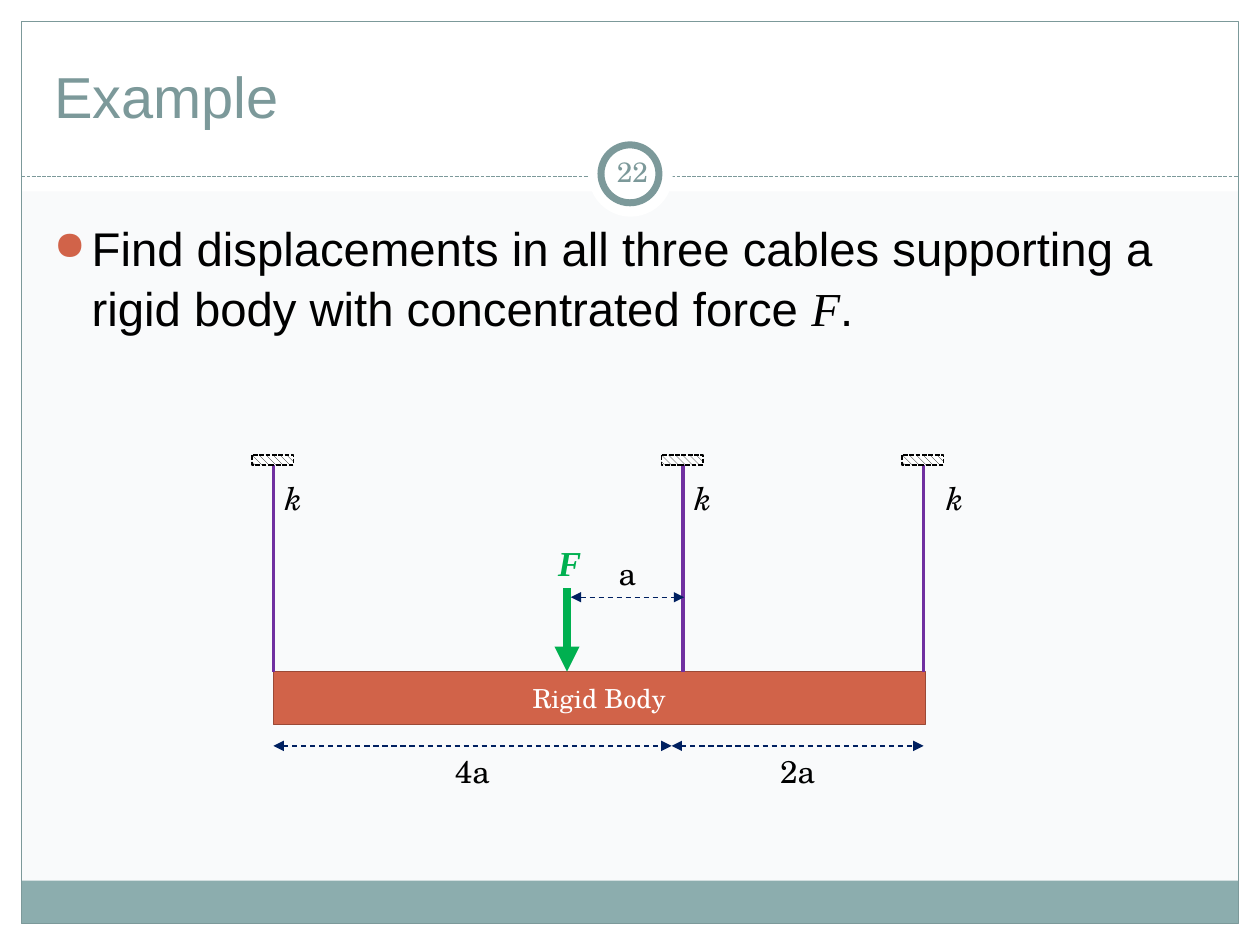
"""Build the slide about a rigid body hung from three cables."""
import lxml.etree
import pptx
import pptx.dml.color
import pptx.enum.dml
import pptx.enum.shapes
import pptx.enum.text
import pptx.oxml.ns
import pptx.util

Inches = pptx.util.Inches
Pt = pptx.util.Pt
Align = pptx.enum.text.PP_ALIGN
Anchor = pptx.enum.text.MSO_ANCHOR
Dash = pptx.enum.dml.MSO_LINE
Preset = pptx.enum.shapes.MSO_SHAPE

COLOURS = {
    "background": "F9FAFB", "paper": "FFFFFF", "ink": "000000",
    "frame": "7C999A", "footer": "8CADAE", "body": "D16349",
    "body edge": "9B4936", "cable": "7030A0", "dimension": "002060",
    "force": "00B050",
}
SERIF = "TeX Gyre Schola"
CABLES = (2.17, 5.42, 7.33)
BODY_TOP = 5.33
CEILING = 3.67


def colour(name):
    return pptx.dml.color.RGBColor.from_string(COLOURS[name])


def add_child(parent, tag, **attributes):
    return lxml.etree.SubElement(parent, pptx.oxml.ns.qn(tag), attributes)


def set_font(font, size, colour_name, name=SERIF, bold=False, italic=False):
    font.size = Pt(size)
    font.color.rgb = colour(colour_name)
    font.name = name
    font.bold = bold
    font.italic = italic


def add_box(slide, box, fill=None, edge=None, width=0.75, preset=Preset.RECTANGLE):
    shape = slide.shapes.add_shape(preset, *map(Inches, box))
    shape.shadow.inherit = False
    if fill:
        shape.fill.solid()
        shape.fill.fore_color.rgb = colour(fill)
    else:
        shape.fill.background()
    if edge:
        shape.line.color.rgb = colour(edge)
        shape.line.width = Pt(width)
    else:
        shape.line.fill.background()
    return shape


def add_line(slide, start, end, colour_name, width, dash=None, arrows=()):
    line = slide.shapes.add_connector(
        pptx.enum.shapes.MSO_CONNECTOR.STRAIGHT, *map(Inches, (*start, *end)))
    line.line.color.rgb = colour(colour_name)
    line.line.width = Pt(width)
    if dash:
        line.line.dash_style = dash
    outline = line.line._get_or_add_ln()
    for arrow in arrows:
        add_child(outline, f"a:{arrow}", type="triangle")
    add_child(line._element.spPr, "a:effectLst")


def add_dimension(slide, left, right, height):
    add_line(slide, (left, height), (right, height), "dimension", 0.75,
             Dash.DASH, ("headEnd", "tailEnd"))


def add_label(slide, text, left, top, size=18, colour_name="ink", width=1.5,
              height=0.4, **style):
    box = slide.shapes.add_textbox(*map(Inches, (left, top, width, height)))
    frame = box.text_frame
    frame.word_wrap = True
    frame.text = text
    paragraph = frame.paragraphs[0]
    paragraph.alignment = Align.CENTER
    set_font(paragraph.font, size, colour_name, **style)
    return frame


def add_support(slide, centre):
    support = add_box(slide, (centre - 0.17, 3.61, 0.33, 0.08), edge="ink", width=0.9)
    support.line.dash_style = Dash.SQUARE_DOT
    support.fill.patterned()
    support.fill.pattern = pptx.enum.dml.MSO_PATTERN.WIDE_DOWNWARD_DIAGONAL
    support.fill.fore_color.rgb = colour("ink")
    support.fill.back_color.rgb = colour("paper")


def add_frame(slide):
    for box in ((0, 7.33, 10, 0.17), (0, 0, 10, 1.52),
                (0, 0, 0.17, 7.5), (9.83, 0, 0.17, 7.5)):
        add_box(slide, box, "paper")
    add_box(slide, (0.17, 6.99, 9.66, 0.34), "footer")
    add_box(slide, (0.17, 0.17, 9.66, 7.16), edge="frame")
    add_line(slide, (0.17, 1.4), (9.83, 1.4), "frame", 0.75, Dash.SQUARE_DOT)
    add_box(slide, (4.67, 1.05, 0.67, 0.67), "paper", preset=Preset.OVAL)
    add_box(slide, (4.77, 1.15, 0.46, 0.46), "paper", "frame", 4, Preset.OVAL)
    number = add_label(slide, "22", 4.77, 1.12, 16, "frame", 0.5, 0.48)
    number.vertical_anchor = Anchor.MIDDLE
    number.margin_left = number.margin_right = Inches(0.05)


def set_title(slide, text):
    title = slide.shapes.title
    title.left, title.top, title.width, title.height = map(
        Inches, (0.33, 0.25, 9.33, 0.83))
    title.text_frame.text = text
    title.text_frame.vertical_anchor = Anchor.BOTTOM
    paragraph = title.text_frame.paragraphs[0]
    paragraph.alignment = Align.LEFT
    set_font(paragraph.font, 33, "frame", "Arial")
    slide.shapes.element.append(title.element)


def add_task(slide):
    box = slide.shapes.add_textbox(*map(Inches, (0.33, 1.67, 9.3, 5)))
    box.text_frame.word_wrap = True
    paragraph = box.text_frame.paragraphs[0]
    paragraph.line_spacing = 1.05
    for text, name, italic in (
            ("Find displacements in all three cables supporting a rigid body "
             "with concentrated force ", "Arial", False),
            ("F", "Times New Roman", True), (".", "Arial", False)):
        run = paragraph.add_run()
        run.text = text
        set_font(run.font, 27, "ink", name, italic=italic)
    properties = paragraph._p.get_or_add_pPr()
    properties.set("marL", str(Inches(0.3)))
    properties.set("indent", str(-Inches(0.3)))
    bullet_colour = add_child(properties, "a:buClr")
    add_child(bullet_colour, "a:srgbClr", val=COLOURS["body"])
    add_child(properties, "a:buSzPct", val="85000")
    add_child(properties, "a:buChar", char="●")


def add_diagram(slide):
    body = add_box(slide, (CABLES[0], BODY_TOP, 5.17, 0.42), "body", "body edge", 0.25)
    body.text_frame.text = "Rigid Body"
    body.text_frame.vertical_anchor = Anchor.MIDDLE
    paragraph = body.text_frame.paragraphs[0]
    paragraph.alignment = Align.CENTER
    set_font(paragraph.font, 15, "paper")
    for cable, label_left in zip(CABLES, (1.58, 4.83, 6.83)):
        add_line(slide, (cable, BODY_TOP), (cable, CEILING), "cable", 2)
        add_support(slide, cable)
        add_label(slide, "k", label_left, 3.75, italic=True)
    add_dimension(slide, CABLES[0], 5.33, 5.92)
    add_dimension(slide, 5.33, CABLES[2], 5.92)
    add_line(slide, (4.5, 4.67), (4.5, BODY_TOP), "force", 4.75, arrows=("tailEnd",))
    add_dimension(slide, 4.53, 5.43, 4.74)
    for text, left, top in (("4a", 3, 5.92), ("2a", 5.58, 5.92), ("a", 4.23, 4.35)):
        add_label(slide, text, left, top)
    add_label(slide, "F", 3.77, 4.25, 20, "force", height=0.44,
              name="Times New Roman", bold=True, italic=True)


def main():
    presentation = pptx.Presentation()
    presentation.slide_width = Inches(10)
    presentation.slide_height = Inches(7.5)
    slide = presentation.slides.add_slide(presentation.slide_layouts[5])
    slide.background.fill.solid()
    slide.background.fill.fore_color.rgb = colour("background")
    add_frame(slide)
    set_title(slide, "Example")
    add_task(slide)
    add_diagram(slide)
    presentation.save("out.pptx")


if __name__ == "__main__":
    main()
